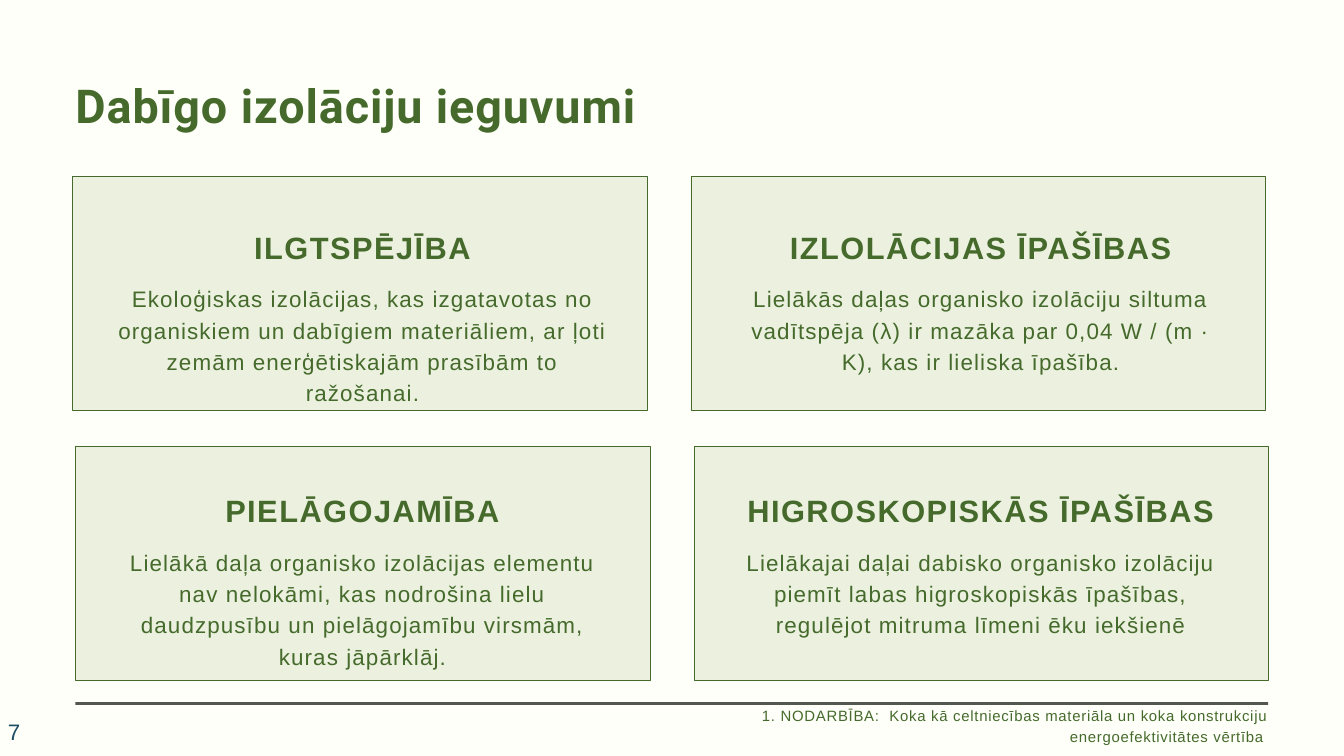
"""Build the slide on the benefits of natural insulation."""
from dataclasses import dataclass

import pptx
import pptx.dml.color
import pptx.enum.shapes
import pptx.enum.text
import pptx.util

Pt = pptx.util.Pt
ALIGN = pptx.enum.text.PP_ALIGN
ANCHOR = pptx.enum.text.MSO_ANCHOR

COLORS = {
    "background": "FEFFF8",
    "green": "456A2C",
    "card": "EBF1DE",
    "rule": "52584D",
    "number": "1E4D65",
}
CARD_W, CARD_H = 615.6, 250.6
TEXT_W = 532
HEADING_H, BODY_H = 40, 101
BODY_DROP = 57.6


@dataclass(frozen=True)
class Card:
    left: float
    top: float
    text_left: float
    text_top: float
    heading: str
    body: str


CARDS = [
    Card(78, 189, 122.4, 243.4, "ILGTSPĒJĪBA",
         "Ekoloģiskas izolācijas, kas izgatavotas no organiskiem un dabīgiem "
         "materiāliem, ar ļoti zemām enerģētiskajām prasībām to ražošanai."),
    Card(740.3, 189, 784.8, 243.4, "IZLOLĀCIJAS ĪPAŠĪBAS",
         "Lielākās daļas organisko izolāciju siltuma vadītspēja (λ) ir mazāka "
         "par 0,04 W / (m · K), kas ir lieliska īpašība."),
    Card(80.8, 478.3, 122.4, 525.6, "PIELĀGOJAMĪBA",
         "Lielākā daļa organisko izolācijas elementu nav nelokāmi, kas nodrošina "
         "lielu daudzpusību un pielāgojamību virsmām, kuras jāpārklāj."),
    Card(743.4, 478.3, 784.8, 525.6, "HIGROSKOPISKĀS ĪPAŠĪBAS",
         "Lielākajai daļai dabisko organisko izolāciju piemīt labas "
         "higroskopiskās īpašības, regulējot mitruma līmeni ēku iekšienē"),
]


def rgb(name: str) -> pptx.dml.color.RGBColor:
    """Return the named colour."""
    return pptx.dml.color.RGBColor.from_string(COLORS[name])


def add_text(s, text: str, left: float, top: float, width: float, height: float, *,
             size: float, spacing: float, line: float | None = None,
             font: str = "Arial", color: str = "green", bold: bool = False,
             align=ALIGN.LEFT, anchor=ANCHOR.TOP,
             inset: tuple[float, float] = (0, 0)) -> None:
    """Add a wrapped text box with one formatted run."""
    sp = s.shapes.add_textbox(Pt(left), Pt(top), Pt(width), Pt(height))
    tf = sp.text_frame
    tf.word_wrap = True
    tf.vertical_anchor = anchor
    tf.margin_left = tf.margin_right = Pt(inset[0])
    tf.margin_top = tf.margin_bottom = Pt(inset[1])
    p = tf.paragraphs[0]
    p.alignment = align
    if line is not None:
        p.line_spacing = Pt(line)
    r = p.add_run()
    r.text = text
    r.font.name = font
    r.font.size = Pt(size)
    r.font.bold = bold
    r.font.color.rgb = rgb(color)
    r._r.get_or_add_rPr().set("spc", str(round(spacing * 100)))


def add_rect(s, left: float, top: float, width: float, height: float, fill: str,
             outline: str | None = None) -> None:
    """Add a flat rectangle, outlined if a colour is given."""
    sp = s.shapes.add_shape(pptx.enum.shapes.MSO_SHAPE.RECTANGLE,
                            Pt(left), Pt(top), Pt(width), Pt(height))
    sp.shadow.inherit = False
    sp.fill.solid()
    sp.fill.fore_color.rgb = rgb(fill)
    if outline is None:
        sp.line.fill.background()
    else:
        sp.line.color.rgb = rgb(outline)
        sp.line.width = Pt(0.75)


def add_card(s, card: Card) -> None:
    """Add a card with its heading and body."""
    add_rect(s, card.left, card.top, CARD_W, CARD_H, "card", "green")
    add_text(s, card.heading, card.text_left, card.text_top, TEXT_W, HEADING_H,
             size=33, spacing=1.6, line=41.2, bold=True, align=ALIGN.CENTER)
    add_text(s, card.body, card.text_left, card.text_top + BODY_DROP, TEXT_W, BODY_H,
             size=24, spacing=1.2, line=33.6, align=ALIGN.CENTER)


def main() -> None:
    """Build and save the slide."""
    prs = pptx.Presentation()
    prs.slide_width, prs.slide_height = Pt(1440), Pt(810)
    s = prs.slides.add_slide(prs.slide_layouts[6])
    s.background.fill.solid()
    s.background.fill.fore_color.rgb = rgb("background")

    add_text(s, "Dabīgo izolāciju ieguvumi", 80.8, 75.6, 891, 62,
             size=50, spacing=1, line=66.8, font="Roboto", bold=True)
    for card in CARDS:
        add_card(s, card)
    add_rect(s, 80.8, 752.4, 1278, 2.9, "rule")
    add_text(s, "7", 1.4, 769.7, 167.8, 28.8, size=24, spacing=1.2,
             color="number", anchor=ANCHOR.MIDDLE, inset=(7.2, 3.6))
    add_text(s, "1. NODARBĪBA:  Koka kā celtniecības materiāla un koka konstrukciju "
             "energoefektivitātes vērtība ", 760.3, 753.8, 599, 50,
             size=16, spacing=0.8, line=22.4, align=ALIGN.RIGHT)
    prs.save("out.pptx")


if __name__ == "__main__":
    main()
